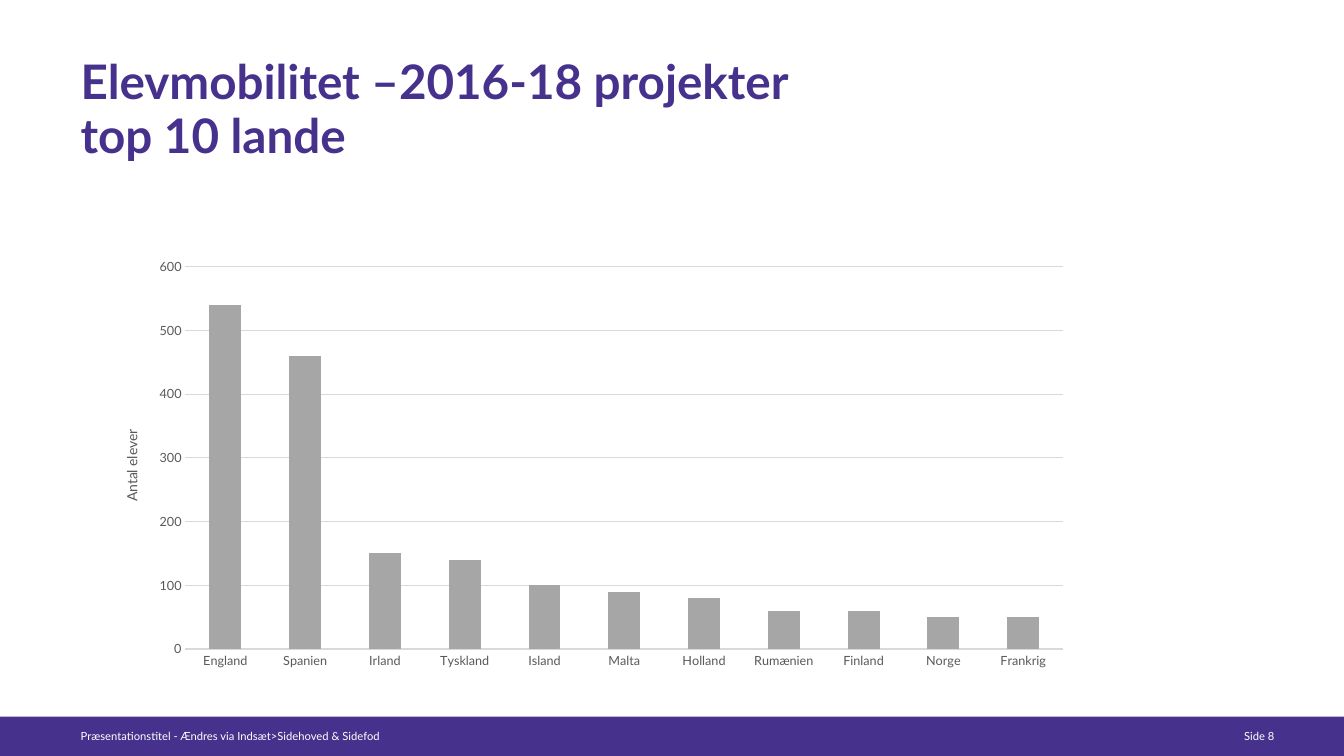
import pptx
import pptx.chart.data
import pptx.dml.color
import pptx.enum.chart
import pptx.enum.shapes
import pptx.enum.text
import pptx.oxml
import pptx.util

Inches = pptx.util.Inches
Pt = pptx.util.Pt
Align = pptx.enum.text.PP_ALIGN
Anchor = pptx.enum.text.MSO_ANCHOR
Tick = pptx.enum.chart.XL_TICK_MARK

FONT = "Lato"
COLORS = {"brand": "46328C", "paper": "FFFFFF", "bar": "A6A6A6",
          "grid": "D9D9D9", "label": "595959"}
PUPILS = {"England": 540, "Spanien": 460, "Irland": 150, "Tyskland": 140,
          "Island": 100, "Malta": 90, "Holland": 80, "Rumænien": 60,
          "Finland": 60, "Norge": 50, "Frankrig": 50}


def color(name):
    return pptx.dml.color.RGBColor.from_string(COLORS[name])


def apply(target, values):
    for key, value in values.items():
        setattr(target, key, value)


def style(font, size, tone, bold=False):
    apply(font, {"name": FONT, "size": Pt(size), "bold": bold})
    font.color.rgb = color(tone)


def rule(line, tone):
    line.color.rgb = color(tone)
    line.width = Pt(0.75)


def write(slide, box, text, size, tone, bold=False, align=Align.LEFT,
          anchor=Anchor.TOP, spacing=None):
    frame = slide.shapes.add_textbox(*map(Inches, box)).text_frame
    apply(frame, {"word_wrap": True, "vertical_anchor": anchor,
                  "margin_left": 0, "margin_right": 0,
                  "margin_top": 0, "margin_bottom": 0})
    line = frame.paragraphs[0]
    line.text = text
    apply(line, {"alignment": align, "line_spacing": spacing})
    for run in line.runs:
        style(run.font, size, tone, bold)


def layout(inner=False, **places):
    target = '<c:layoutTarget val="inner"/>' if inner else ""
    modes = "".join(f'<c:{key}Mode val="edge"/>' for key in "xy")
    sizes = "".join(f'<c:{key} val="{value}"/>' for key, value in places.items())
    return pptx.oxml.parse_xml(
        '<c:layout xmlns:c="http://schemas.openxmlformats.org/drawingml/2006/chart">'
        f"<c:manualLayout>{target}{modes}{sizes}</c:manualLayout></c:layout>")


def place(parent, index, node):
    for old in parent.findall(node.tag):
        parent.remove(old)
    parent.insert(index, node)


def draw_title(slide, box):
    write(slide, box, "Elevmobilitet –2016-18 projekter\vtop 10 lande",
          34, "brand", bold=True, spacing=0.94)


def draw_chart(slide, box):
    data = pptx.chart.data.CategoryChartData()
    data.categories = list(PUPILS)
    data.add_series("Series 1", list(PUPILS.values()))
    kind = pptx.enum.chart.XL_CHART_TYPE.COLUMN_STACKED
    chart = slide.shapes.add_chart(kind, *map(Inches, box), data).chart
    apply(chart, {"has_title": False, "has_legend": False})
    style(chart.font, 10, "label")

    plot = chart.plots[0]
    apply(plot, {"gap_width": 150, "overlap": 100, "vary_by_categories": False})
    fill = plot.series[0].format.fill
    fill.solid()
    fill.fore_color.rgb = color("bar")

    names, scale = chart.category_axis, chart.value_axis
    for axis in (names, scale):
        apply(axis, {"major_tick_mark": Tick.NONE, "minor_tick_mark": Tick.NONE})
        style(axis.tick_labels.font, 9, "label")
    rule(names.format.line, "grid")
    scale.format.line.fill.background()
    apply(scale, {"minimum_scale": 0, "maximum_scale": 600, "major_unit": 100,
                  "has_major_gridlines": True, "has_title": True})
    rule(scale.major_gridlines.format.line, "grid")

    title = scale.axis_title
    title.text_frame.text = "Antal elever"
    style(title.text_frame.paragraphs[0].runs[0].font, 10, "label")
    place(title._element, 1, layout(x=0.025, y=0.476))
    area = chart._chartSpace.chart.plotArea
    place(area, 0, layout(inner=True, x=0.092, y=0.142, w=0.89, h=0.797))


def draw_footer(slide, box):
    left, top, width, height = box
    kind = pptx.enum.shapes.MSO_SHAPE.RECTANGLE
    band = slide.shapes.add_shape(kind, *map(Inches, box))
    band.shadow.inherit = False
    band.fill.solid()
    band.fill.fore_color.rgb = color("brand")
    band.line.fill.background()
    row = top + 0.06
    write(slide, (left + 0.8, row, 5.59, 0.2),
          "Præsentationstitel - Ændres via Indsæt>Sidehoved & Sidefod",
          8, "paper", anchor=Anchor.BOTTOM)
    write(slide, (left + width - 1.18, row, 0.49, 0.2), "Side 8",
          8, "paper", align=Align.RIGHT, anchor=Anchor.BOTTOM)


def main():
    deck = pptx.Presentation()
    apply(deck, {"slide_width": Inches(13.33), "slide_height": Inches(7.5)})
    slide = deck.slides.add_slide(deck.slide_layouts[6])
    draw_footer(slide, (0, 7.11, 13.33, 0.39))
    draw_title(slide, (0.8, 0.56, 11.73, 1.02))
    draw_chart(slide, (0.94, 1.97, 9.78, 4.76))
    deck.save("out.pptx")


if __name__ == "__main__":
    main()
